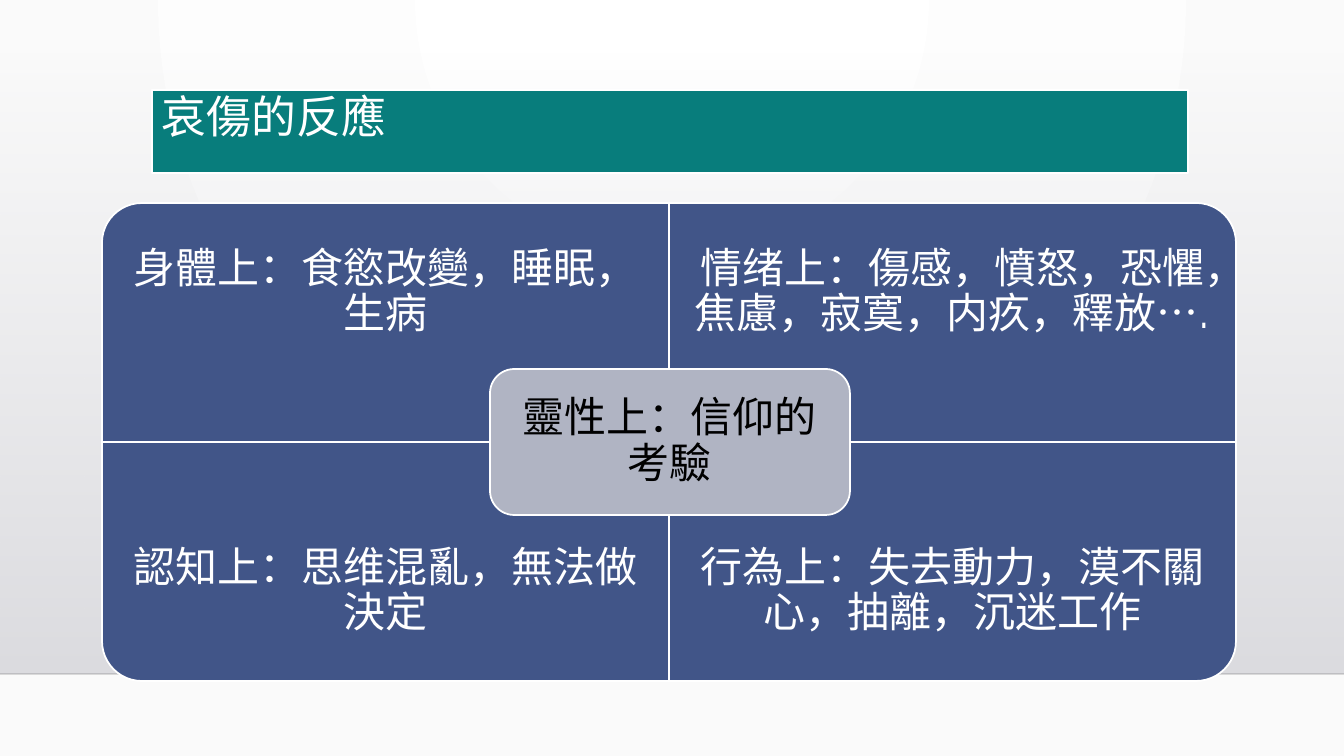
from dataclasses import dataclass

from pptx import Presentation
from pptx.dml.color import RGBColor
from pptx.enum.shapes import MSO_CONNECTOR, MSO_SHAPE
from pptx.enum.text import MSO_ANCHOR, PP_ALIGN
from pptx.oxml import parse_xml
from pptx.oxml.ns import nsdecls, qn
from pptx.oxml.xmlchemy import OxmlElement
from pptx.util import Emu, Pt

PAGE_WIDTH, PAGE_HEIGHT = 1344, 756
SCALE = 12192000 / PAGE_WIDTH


@dataclass(frozen=True)
class Theme:
    font: str = "TeX Gyre Adventor"
    white: str = "FFFFFF"
    black: str = "000000"
    paper: str = "FAFAFA"
    wall_top: str = "DCDCE0"
    wall_bottom: str = "DEDEE2"
    floor_line: str = "000001"
    teal: str = "087D7C"
    blue: str = "415588"
    grey: str = "B0B4C3"
    title_size: float = 32
    body_size: float = 30
    title_line: float = 1.75
    body_line: float = 1.25


@dataclass(frozen=True)
class Box:
    left: int
    top: int
    width: int
    height: int

    def emu(self) -> list[Emu]:
        return [px(n) for n in (self.left, self.top, self.width, self.height)]

    def turned(self) -> "Box":
        shift = (self.width - self.height) // 2
        return Box(self.left + shift, self.top - shift, self.height, self.width)


@dataclass(frozen=True)
class Stop:
    position: int
    color: str
    opacity: int = 100


@dataclass(frozen=True)
class Reaction:
    column: int
    row: int
    rotation: int
    text: str


THEME = Theme()
FLOOR = 674
WALL = Box(0, 51, PAGE_WIDTH, FLOOR - 51)
TITLE = Box(152, 90, 1036, 83)
CENTER = Box(490, 369, 360, 146)
GRID_LEFT, GRID_TOP = 102, 203
CELL_WIDTH, CELL_HEIGHT, LABEL_HEIGHT = 567, 239, 179
REACTIONS = [
    Reaction(0, 0, 270, "身體上：食慾改變，睡眠，生病"),
    Reaction(1, 0, 0, "情绪上：傷感，憤怒，恐懼，焦慮，寂寞，内疚，釋放…."),
    Reaction(0, 1, 180, "認知上：思维混亂，無法做決定"),
    Reaction(1, 1, 90, "行為上：失去動力，漠不關心，抽離，沉迷工作"),
]


def px(length: int) -> Emu:
    return Emu(round(length * SCALE))


def apply(target, values: dict) -> None:
    for name, value in values.items():
        setattr(target, name, value)


def set_gradient(element, stops: list[Stop], direction: str) -> None:
    marks = "".join(
        f'<a:gs pos="{stop.position * 1000}"><a:srgbClr val="{stop.color}">'
        f'<a:alpha val="{stop.opacity * 1000}"/></a:srgbClr></a:gs>'
        for stop in stops
    )
    gradient = parse_xml(
        f'<a:gradFill {nsdecls("a")} rotWithShape="1">'
        f"<a:gsLst>{marks}</a:gsLst>{direction}</a:gradFill>"
    )
    current = next(element.iter(qn("a:gradFill")))
    current.getparent().replace(current, gradient)


def add_panel(page, kind: MSO_SHAPE, box: Box, color: str, line: float, rotation: int = 0):
    panel = page.shapes.add_shape(kind, *box.emu())
    panel.shadow.inherit = False
    panel.rotation = rotation
    panel.fill.solid()
    panel.fill.fore_color.rgb = RGBColor.from_string(color)
    panel.line.color.rgb = RGBColor.from_string(THEME.white)
    panel.line.width = Pt(line)
    return panel


def write(shape, text: str, size: float, color: str, align: PP_ALIGN,
          anchor: MSO_ANCHOR, inset: tuple[int, int]) -> None:
    side, edge = map(px, inset)
    frame = shape.text_frame
    apply(frame, {
        "word_wrap": True, "vertical_anchor": anchor,
        "margin_left": side, "margin_right": side,
        "margin_top": edge, "margin_bottom": edge,
    })
    para = frame.paragraphs[0]
    apply(para, {"alignment": align, "line_spacing": 0.9})
    span = para.add_run()
    span.text = text
    apply(span.font, {"name": THEME.font, "size": Pt(size)})
    span.font.color.rgb = RGBColor.from_string(color)


def draw_backdrop(page) -> None:
    page.background.fill.gradient()
    set_gradient(
        page.background._cSld,
        [Stop(0, THEME.white), Stop(100, THEME.paper)],
        '<a:path path="circle"><a:fillToRect l="43000" t="0" r="43000" b="100000"/></a:path>',
    )
    wall = page.shapes.add_shape(MSO_SHAPE.RECTANGLE, *WALL.emu())
    wall.shadow.inherit = False
    wall.line.fill.background()
    wall.fill.gradient()
    set_gradient(
        wall._element,
        [Stop(0, THEME.wall_top, 0), Stop(100, THEME.wall_bottom)],
        '<a:lin ang="5400000" scaled="0"/>',
    )
    floor = page.shapes.add_connector(
        MSO_CONNECTOR.STRAIGHT, px(0), px(FLOOR), px(PAGE_WIDTH), px(FLOOR)
    )
    floor.line.width = Pt(1)
    floor.line.color.rgb = RGBColor.from_string(THEME.floor_line)
    alpha = OxmlElement("a:alpha")
    alpha.set("val", "20000")
    next(floor._element.spPr.iter(qn("a:srgbClr"))).append(alpha)
    floor._element.spPr.append(OxmlElement("a:effectLst"))


def draw_reaction(page, reaction: Reaction) -> None:
    cell = Box(GRID_LEFT + reaction.column * CELL_WIDTH,
               GRID_TOP + reaction.row * CELL_HEIGHT, CELL_WIDTH, CELL_HEIGHT)
    outline = cell.turned() if reaction.rotation % 180 else cell
    add_panel(page, MSO_SHAPE.ROUND_1_RECTANGLE, outline, THEME.blue,
              THEME.body_line, reaction.rotation)
    label_top = cell.top + reaction.row * (CELL_HEIGHT - LABEL_HEIGHT)
    label = Box(cell.left, label_top, CELL_WIDTH, LABEL_HEIGHT)
    write(page.shapes.add_textbox(*label.emu()), reaction.text, THEME.body_size,
          THEME.white, PP_ALIGN.CENTER, MSO_ANCHOR.MIDDLE, (23, 23))


def main() -> None:
    deck = Presentation()
    apply(deck, {"slide_width": px(PAGE_WIDTH), "slide_height": px(PAGE_HEIGHT)})
    page = deck.slides.add_slide(deck.slide_layouts[6])
    draw_backdrop(page)
    title = add_panel(page, MSO_SHAPE.RECTANGLE, TITLE, THEME.teal, THEME.title_line)
    write(title, "哀傷的反應", THEME.title_size, THEME.white,
          PP_ALIGN.LEFT, MSO_ANCHOR.TOP, (10, 5))
    for reaction in REACTIONS:
        draw_reaction(page, reaction)
    center = add_panel(page, MSO_SHAPE.ROUNDED_RECTANGLE, CENTER, THEME.grey, THEME.body_line)
    write(center, "靈性上：信仰的考驗", THEME.body_size, THEME.black,
          PP_ALIGN.CENTER, MSO_ANCHOR.MIDDLE, (19, 19))
    deck.save("out.pptx")


if __name__ == "__main__":
    main()
